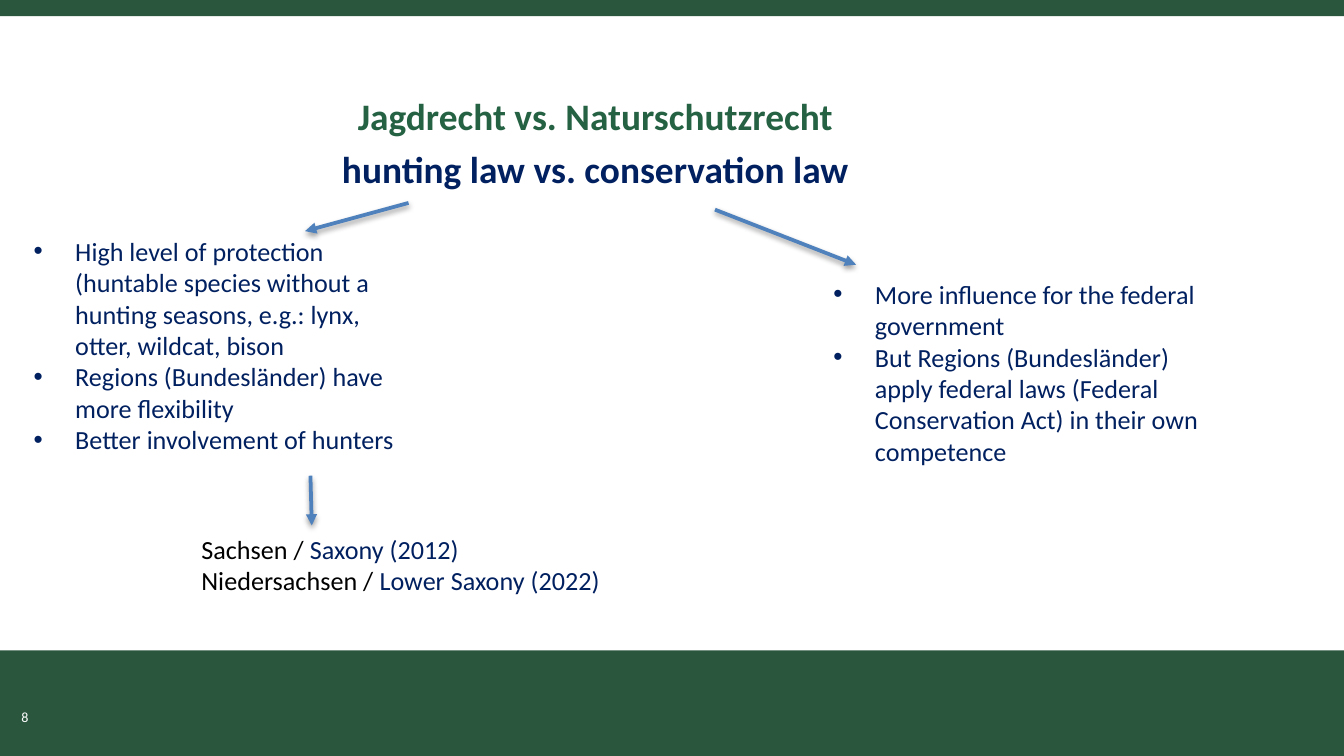
from lxml import etree
from pptx import Presentation, util as u
from pptx.dml.color import RGBColor
from pptx.enum import shapes, text
from pptx.oxml.ns import qn

THEME = dict(font="Calibri", band="2A563E", green="256143", navy="002060",
             black="000000", white="FFFFFF", arrow="4F81BD",
             title=20, body=14, number=7.5, line=2)

WIDTH = 10
HEIGHT = WIDTH * 9 / 16
BANDS = [(0, 4.84, WIDTH, HEIGHT - 4.84), (0, 0, WIDTH, 0.12)]
TITLE = [[("Jagdrecht vs. Naturschutzrecht", "green")],
         [("hunting law vs. conservation law", "navy")]]
LISTS = [
    ((0.15, 1.7, 3.07, 1.75), [
        "High level of protection (huntable species without a hunting seasons, "
        "e.g.: lynx, otter, wildcat, bison",
        "Regions (Bundesländer) have more flexibility",
        "Better involvement of hunters"]),
    ((6.1, 2.02, 3, 1.51), [
        "More influence for the federal government",
        "But Regions (Bundesländer) apply federal laws (Federal Conservation Act) "
        "in their own competence"]),
]
REGIONS = [[("Sachsen / ", "black"), ("Saxony (2012)", "navy")],
           [("Niedersachsen / ", "black"), ("Lower Saxony (2022)", "navy")]]
NUMBER = [[("8", "white")]]
ARROWS = [((5.32, 1.56), (6.37, 1.97)),
          ((3.04, 1.51), (2.27, 1.72)),
          ((2.31, 3.54), (2.32, 3.91))]


def inches(values):
    return [u.Inches(v) for v in values]


def color(name):
    return RGBColor.from_string(THEME[name])


def place(sp, box):
    sp.left, sp.top, sp.width, sp.height = inches(box)


def write(tf, lines, size, bold=False, margins=(0.1, 0.05, 0.1, 0.05)):
    tf.word_wrap = True
    tf.auto_size = text.MSO_AUTO_SIZE.NONE
    tf.margin_left, tf.margin_top, tf.margin_right, tf.margin_bottom = inches(margins)
    for i, runs in enumerate(lines):
        p = tf.paragraphs[0] if i == 0 else tf.add_paragraph()
        p.space_before = u.Pt(0)
        for words, name in runs:
            r = p.add_run()
            r.text = words
            r.font.name = THEME["font"]
            r.font.size = u.Pt(THEME[size])
            r.font.bold = bold
            r.font.color.rgb = color(name)


def add_band(s, box):
    sp = s.shapes.add_shape(shapes.MSO_SHAPE.RECTANGLE, *inches(box))
    sp.shadow.inherit = False
    sp.fill.solid()
    sp.fill.fore_color.rgb = color("band")
    sp.line.fill.background()


def add_text(s, box, *args, **kwargs):
    sp = s.shapes.add_textbox(*inches(box))
    write(sp.text_frame, *args, **kwargs)


def add_arrow(s, start, end):
    sp = s.shapes.add_connector(shapes.MSO_CONNECTOR.STRAIGHT, *inches(start + end))
    sp.line.color.rgb = color("arrow")
    sp.line.width = u.Pt(THEME["line"])
    etree.SubElement(sp.line._get_or_add_ln(), qn("a:tailEnd"), type="triangle")
    effects = etree.SubElement(sp._element.spPr, qn("a:effectLst"))
    shadow = etree.SubElement(effects, qn("a:outerShdw"), blurRad=str(u.Pt(3.1)),
                              dist=str(u.Pt(1.6)), dir="5400000", rotWithShape="0")
    tint = etree.SubElement(shadow, qn("a:srgbClr"), val=THEME["black"])
    etree.SubElement(tint, qn("a:alpha"), val="38000")


def main():
    prs = Presentation()
    prs.slide_width, prs.slide_height = inches((WIDTH, HEIGHT))
    s = prs.slides.add_slide(prs.slide_layouts[3])

    for box in BANDS:
        add_band(s, box)
    add_text(s, (0.16, 5.27, 2.33, 0.3), NUMBER, "number", margins=(0, 0, 0, 0))

    title = s.shapes.title
    place(title, (2.18, 0.49, 4.6, 0.93))
    tf = title.text_frame
    write(tf, TITLE, "title", bold=True, margins=(0, 0.05, 0.1, 0))
    tf.vertical_anchor = text.MSO_ANCHOR.BOTTOM
    for p in tf.paragraphs:
        p.alignment = text.PP_ALIGN.CENTER
    tf.paragraphs[1].space_before = u.Pt(4.5)

    for idx, (box, items) in enumerate(LISTS, 1):
        sp = s.placeholders[idx]
        place(sp, box)
        write(sp.text_frame, [[(item, "navy")] for item in items], "body")
        for p in sp.text_frame.paragraphs:
            pPr = p._p.get_or_add_pPr()
            pPr.set("marL", str(u.Inches(0.31)))
            pPr.set("indent", str(u.Inches(-0.31)))

    add_text(s, (1.4, 3.92, 3.89, 0.57), REGIONS, "body")
    for start, end in ARROWS:
        add_arrow(s, start, end)
    prs.save("out.pptx")


if __name__ == "__main__":
    main()
